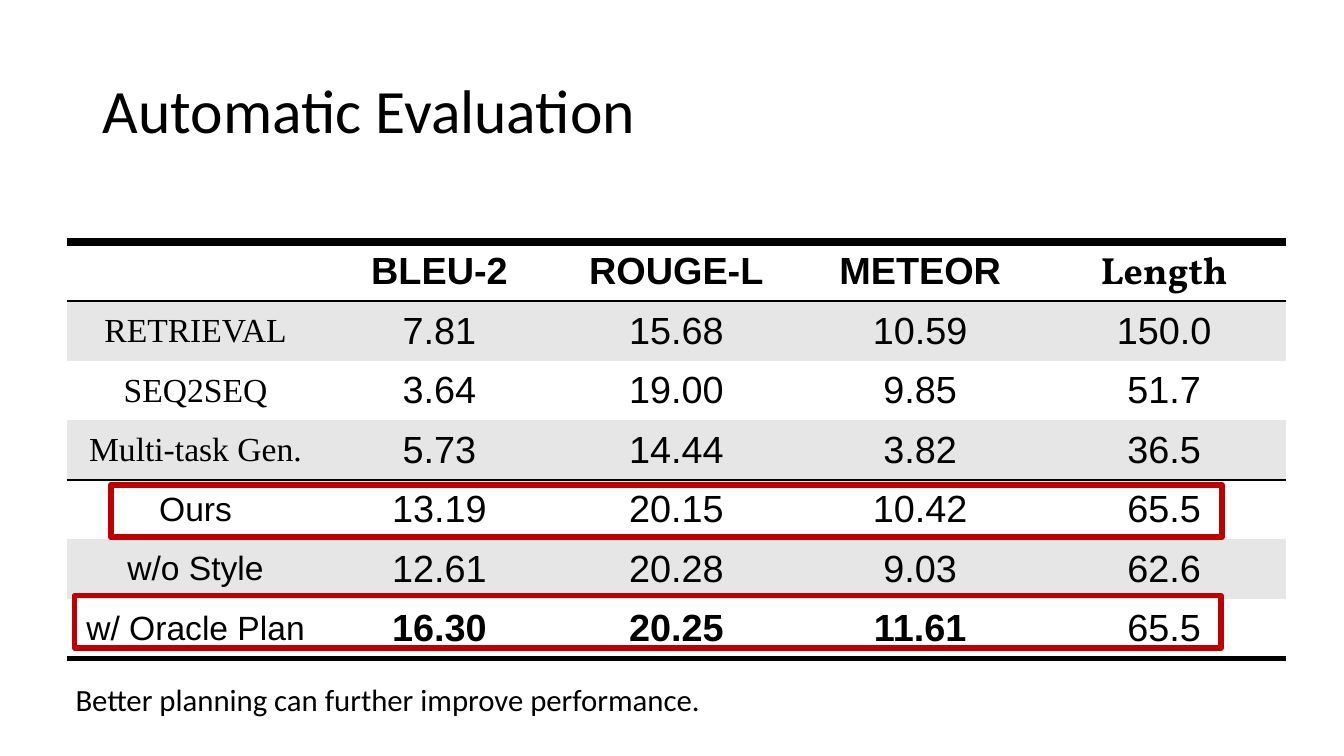
from dataclasses import dataclass

from lxml.etree import SubElement
from pptx import Presentation
from pptx.dml.color import RGBColor
from pptx.enum.shapes import MSO_SHAPE
from pptx.enum.text import MSO_ANCHOR, PP_ALIGN
from pptx.oxml.ns import qn
from pptx.util import Emu, Inches, Pt


@dataclass(frozen=True)
class Theme:
    ink: str = "000000"
    band: str = "E7E6E6"
    accent: str = "C00000"
    title: int = 44
    value: int = 27
    label: int = 24
    caption: int = 22
    heading_font: str = "Calibri"
    table_font: str = "Arial"
    serif: str = "Times New Roman"
    length_font: str = "Vollkorn"


@dataclass(frozen=True)
class Box:
    """Place and size in percent of the slide's width and height."""
    x: float
    y: float
    w: float
    h: float


@dataclass(frozen=True)
class Row:
    label: str
    values: tuple[str, ...]
    font: str = "Arial"
    shaded: bool = False
    bold_values: int = 0


THEME = Theme()
HEADERS = ("BLEU-2", "ROUGE-L", "METEOR", "Length")
ROWS = (
    Row("RETRIEVAL", ("7.81", "15.68", "10.59", "150.0"), THEME.serif, shaded=True),
    Row("SEQ2SEQ", ("3.64", "19.00", "9.85", "51.7"), THEME.serif),
    Row("Multi-task Gen.", ("5.73", "14.44", "3.82", "36.5"), THEME.serif, shaded=True),
    Row("Ours", ("13.19", "20.15", "10.42", "65.5")),
    Row("w/o Style", ("12.61", "20.28", "9.03", "62.6"), shaded=True),
    Row("w/ Oracle Plan", ("16.30", "20.25", "11.61", "65.5"), bold_values=3),
)
# Rule widths in points, keyed by the number of rows above the rule
RULES = {0: 6, 1: 1.5, 4: 2.25, len(ROWS) + 1: 4.5}

COLUMNS = (19.2, 17.1, 18.15, 18.15, 18.15)
ROW_HEIGHT = 7.77
TITLE = Box(6.9, 5.33, 86.27, 19.33)
TABLE = Box(4.95, 32, sum(COLUMNS), ROW_HEIGHT * (len(ROWS) + 1))
CAPTION = Box(4.88, 89.33, 48.54, 6.27)
HIGHLIGHTS = (Box(8.25, 64.13, 82.67, 6.93), Box(5.55, 78.8, 85.3, 6.93))

prs = Presentation()
prs.slide_width, prs.slide_height = Inches(13.33), Inches(7.5)


def across(share: float) -> Emu:
    return Emu(round(prs.slide_width * share / 100))


def down(share: float) -> Emu:
    return Emu(round(prs.slide_height * share / 100))


def place(box: Box) -> tuple[Emu, Emu, Emu, Emu]:
    return across(box.x), down(box.y), across(box.w), down(box.h)


def write(tf, text: str, *, size: float, font: str, bold: bool = False,
          align=PP_ALIGN.LEFT, spacing: float = 1.0) -> None:
    p = tf.paragraphs[0]
    p.alignment, p.line_spacing = align, spacing
    r = p.add_run()
    r.text = text
    r.font.size, r.font.name, r.font.bold = Pt(size), font, bold
    r.font.color.rgb = RGBColor.from_string(THEME.ink)


def add_text(s, box: Box, text: str, *, wrap: bool = True,
             anchor=MSO_ANCHOR.TOP, **style) -> None:
    tf = s.shapes.add_textbox(*place(box)).text_frame
    tf.word_wrap, tf.vertical_anchor = wrap, anchor
    write(tf, text, **style)


def set_borders(cell, top: float, bottom: float) -> None:
    """Rule the cell above and below; a width of 0 leaves the edge open."""
    tc_pr = cell._tc.get_or_add_tcPr()
    for side, width in (("L", 0), ("R", 0), ("T", top), ("B", bottom)):
        ln = SubElement(tc_pr, qn(f"a:ln{side}"), w=str(Pt(width)))
        if width:
            fill = SubElement(ln, qn("a:solidFill"))
            SubElement(fill, qn("a:srgbClr"), val=THEME.ink)
        else:
            SubElement(ln, qn("a:noFill"))


def fill_cell(cell, row: int, text: str, *, shaded: bool = False, **style) -> None:
    set_borders(cell, RULES.get(row, 0), RULES.get(row + 1, 0))
    if shaded:
        cell.fill.solid()
        cell.fill.fore_color.rgb = RGBColor.from_string(THEME.band)
    else:
        cell.fill.background()
    cell.vertical_anchor = MSO_ANCHOR.MIDDLE
    cell.margin_left = cell.margin_right = Inches(0.13)
    cell.margin_top = cell.margin_bottom = Inches(0.07)
    if text:
        write(cell.text_frame, text, align=PP_ALIGN.CENTER, **style)


def add_results(s) -> None:
    table = s.shapes.add_table(len(ROWS) + 1, len(COLUMNS), *place(TABLE)).table
    table.first_row = table.horz_banding = False
    for column, width in zip(table.columns, COLUMNS):
        column.width = across(width)
    for table_row in table.rows:
        table_row.height = down(ROW_HEIGHT)

    # Header
    for i, text in enumerate(("", *HEADERS)):
        font = THEME.length_font if text == "Length" else THEME.table_font
        fill_cell(table.cell(0, i), 0, text, size=THEME.value, font=font, bold=True)

    # Models and their scores
    for n, row in enumerate(ROWS, start=1):
        fill_cell(table.cell(n, 0), n, row.label, shaded=row.shaded,
                  size=THEME.label, font=row.font)
        for i, value in enumerate(row.values, start=1):
            fill_cell(table.cell(n, i), n, value, shaded=row.shaded, size=THEME.value,
                      font=THEME.table_font, bold=i <= row.bold_values)


def add_highlight(s, box: Box) -> None:
    sp = s.shapes.add_shape(MSO_SHAPE.RECTANGLE, *place(box))
    sp.shadow.inherit = False
    sp.fill.background()
    sp.line.color.rgb = RGBColor.from_string(THEME.accent)
    sp.line.width = Pt(4)


def main() -> None:
    s = prs.slides.add_slide(prs.slide_layouts[6])
    add_text(s, TITLE, "Automatic Evaluation", anchor=MSO_ANCHOR.MIDDLE,
             size=THEME.title, font=THEME.heading_font, spacing=0.9)
    add_results(s)
    add_text(s, CAPTION, "Better planning can further improve performance.",
             wrap=False, size=THEME.caption, font=THEME.heading_font)
    for box in HIGHLIGHTS:
        add_highlight(s, box)
    prs.save("out.pptx")


if __name__ == "__main__":
    main()
